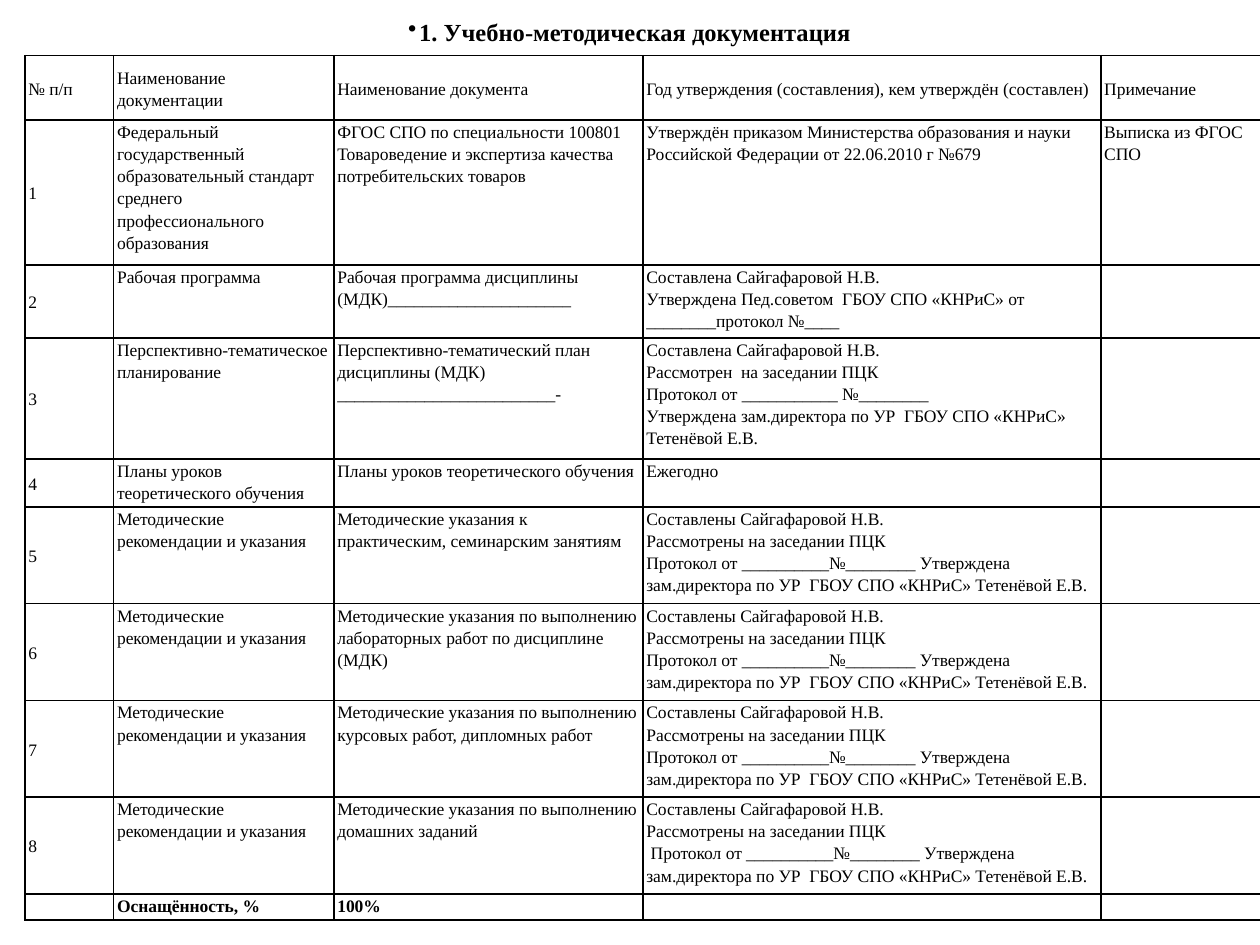
from lxml import etree
from pptx import Presentation
from pptx import util as u
from pptx.dml.color import RGBColor
from pptx.enum import text
from pptx.oxml.ns import qn

BLACK = "000000"
FONT = "Times New Roman"
COLS = [1.79, 4.44, 6.23, 9.23, 3.23]
ROWS = [1.3, 2.92, 1.47, 2.44, 0.97] + [1.95] * 4 + [0.53]

COLLEGE = "ГБОУ СПО «КНРиС»"
AUTHOR = "Сайгафаровой Н.В."
DEPUTY = f"зам.директора по УР  {COLLEGE} Тетенёвой Е.В."
GUIDES = "Методические рекомендации и указания"
LESSONS = "Планы уроков теоретического обучения"
APPROVAL = (f"Составлены {AUTHOR}\nРассмотрены на заседании ПЦК\n"
            f"Протокол от __________№________ Утверждена {DEPUTY}")

HEADER = ["№ п/п", "Наименование документации", "Наименование документа",
          "Год утверждения (составления), кем утверждён (составлен)", "Примечание"]
DOCUMENTS = [
    ["Федеральный государственный образовательный стандарт среднего "
     "профессионального образования",
     "ФГОС СПО по специальности 100801 Товароведение и экспертиза качества "
     "потребительских товаров",
     "Утверждён приказом Министерства образования и науки Российской "
     "Федерации от 22.06.2010 г №679",
     "Выписка из ФГОС СПО"],
    ["Рабочая программа",
     "Рабочая программа дисциплины (МДК)" + "_" * 21,
     f"Составлена {AUTHOR}\nУтверждена Пед.советом  {COLLEGE} от "
     "________протокол №____", ""],
    ["Перспективно-тематическое планирование",
     "Перспективно-тематический план дисциплины (МДК) " + "_" * 25 + "-",
     f"Составлена {AUTHOR}\nРассмотрен  на заседании ПЦК\n"
     f"Протокол от ___________ №________\nУтверждена {DEPUTY}", ""],
    [LESSONS, LESSONS, "Ежегодно", ""],
    [GUIDES, "Методические указания к практическим, семинарским занятиям",
     APPROVAL, ""],
    [GUIDES, "Методические указания по выполнению лабораторных работ по "
     "дисциплине (МДК)", APPROVAL, ""],
    [GUIDES, "Методические указания по выполнению курсовых работ, дипломных работ",
     APPROVAL, ""],
    [GUIDES, "Методические указания по выполнению домашних заданий",
     APPROVAL.replace("Протокол", " Протокол"), ""],
]
TOTAL = ["", "Оснащённость, %", "100%", "", ""]


def rgb(value):
    return RGBColor.from_string(value)


def set_attrs(obj, values):
    for name, value in values.items():
        setattr(obj, name, value)


def add_run(p, content, size, bold=False):
    r = p.add_run()
    r.text = content
    set_attrs(r.font, {"name": FONT, "size": u.Pt(size), "bold": bold})
    r.font.color.rgb = rgb(BLACK)


def add_borders(cell):
    tc_pr = cell._tc.get_or_add_tcPr()
    for i, side in enumerate(("lnL", "lnR", "lnT", "lnB")):
        ln = etree.Element(qn(f"a:{side}"), w=str(u.Pt(1)))
        fill = etree.SubElement(ln, qn("a:solidFill"))
        etree.SubElement(fill, qn("a:srgbClr"), val=BLACK)
        tc_pr.insert(i, ln)


def fill_cell(cell, content, middle, bold):
    anchor = text.MSO_ANCHOR.MIDDLE if middle else text.MSO_ANCHOR.TOP
    set_attrs(cell, {"margin_left": u.Cm(0.07), "margin_right": u.Cm(0.07),
                     "margin_top": 0, "margin_bottom": 0,
                     "vertical_anchor": anchor})
    cell.fill.background()
    add_borders(cell)
    tf = cell.text_frame
    for i, line in enumerate(content.split("\n")):
        p = tf.add_paragraph() if i else tf.paragraphs[0]
        p.line_spacing = 1.15
        if line:
            add_run(p, line, 10, bold)
        else:
            etree.SubElement(p._p, qn("a:endParaRPr"), sz="1000")


def add_documents_table(s):
    numbered = [[str(n), *row] for n, row in enumerate(DOCUMENTS, 1)]
    rows = [HEADER, *numbered, TOTAL]
    table = s.shapes.add_table(len(ROWS), len(COLS), u.Cm(0.5), u.Cm(1.12),
                               u.Cm(sum(COLS)), u.Cm(sum(ROWS))).table
    set_attrs(table, {"first_row": False, "horz_banding": False})
    for column, width in zip(table.columns, COLS):
        column.width = u.Cm(width)
    for row, height in zip(table.rows, ROWS):
        row.height = u.Cm(height)
    for i, row in enumerate(rows):
        for j, content in enumerate(row):
            fill_cell(table.cell(i, j), content, middle=i == 0 or j == 0,
                      bold=row is TOTAL)


def add_title(s, content):
    sp = s.shapes.add_textbox(u.Cm(7.98), u.Cm(0.2), u.Cm(9.47), u.Cm(0.86))
    tf = sp.text_frame
    set_attrs(tf, {"word_wrap": False, "vertical_anchor": text.MSO_ANCHOR.MIDDLE,
                   "auto_size": text.MSO_AUTO_SIZE.SHAPE_TO_FIT_TEXT})
    p = tf.paragraphs[0]
    p.alignment = text.PP_ALIGN.CENTER
    etree.SubElement(p._p.get_or_add_pPr(), qn("a:buChar"), char="•")
    add_run(p, content, 14, bold=True)


def main():
    prs = Presentation()
    set_attrs(prs, {"slide_width": u.Cm(25.4), "slide_height": u.Cm(19.05)})
    s = prs.slides.add_slide(prs.slide_layouts[6])
    # Table of documents
    add_documents_table(s)
    # Heading above the table
    add_title(s, "1. Учебно-методическая документация")
    prs.save("out.pptx")


if __name__ == "__main__":
    main()
